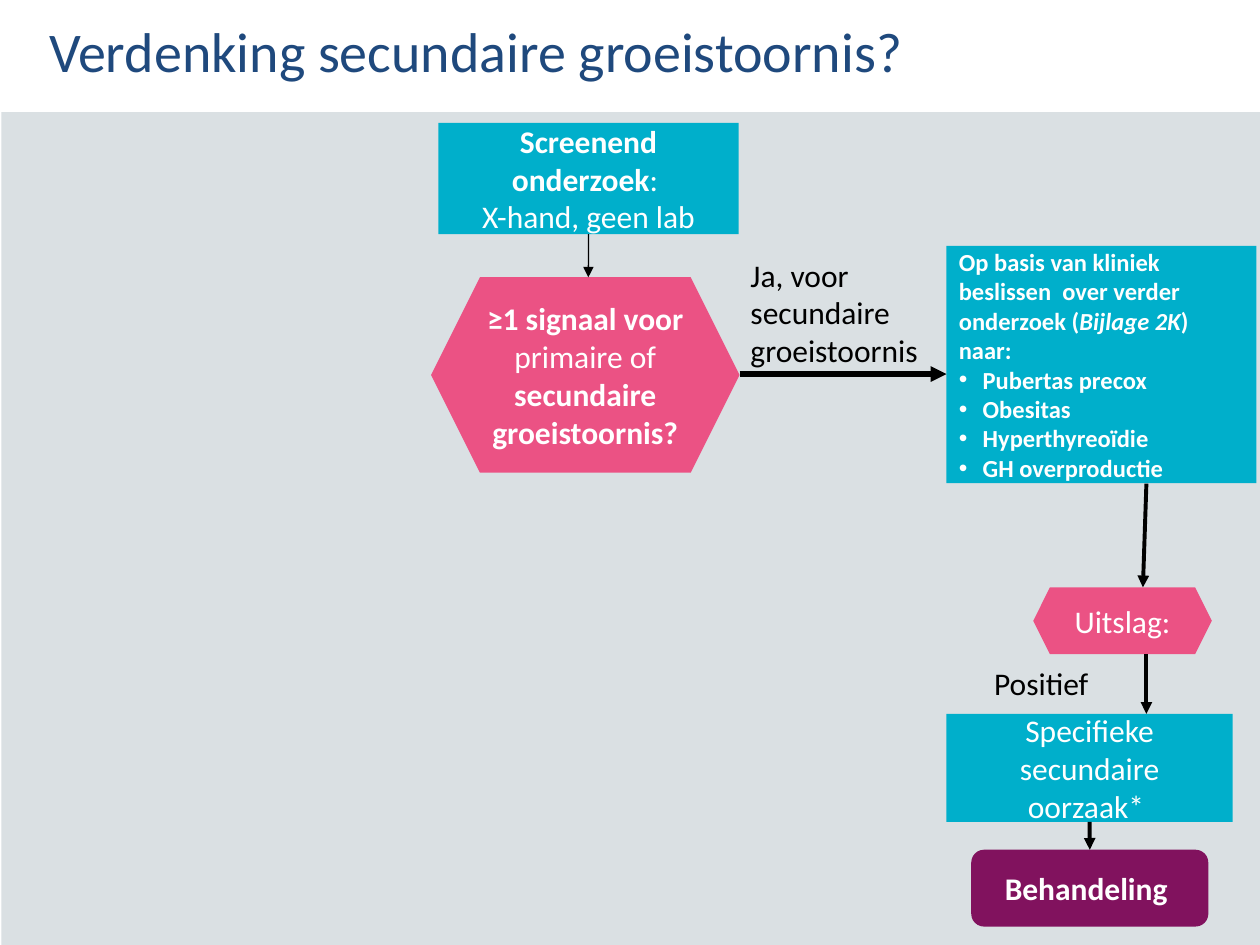
from lxml import etree
from pptx import Presentation
from pptx.dml.color import RGBColor
from pptx.enum import shapes, text
from pptx.oxml import ns
from pptx.util import Cm, Pt

WHITE = RGBColor(0xFF, 0xFF, 0xFF)
BLACK = RGBColor(0, 0, 0)
GREY = RGBColor(0xDA, 0xE0, 0xE3)
PINK = RGBColor(0xEB, 0x52, 0x84)
CYAN = RGBColor(0x00, 0xAF, 0xCB)
PURPLE = RGBColor(0x81, 0x12, 0x5E)
NAVY = RGBColor(0x1F, 0x49, 0x7D)

RECT = shapes.MSO_SHAPE.RECTANGLE
HEXAGON = shapes.MSO_SHAPE.HEXAGON
ROUNDED = shapes.MSO_SHAPE.ROUNDED_RECTANGLE
CENTER = text.PP_ALIGN.CENTER
LEFT = text.PP_ALIGN.LEFT

prs = Presentation()
prs.slide_width, prs.slide_height = Cm(25.4), Cm(19.05)
s = prs.slides.add_slide(prs.slide_layouts[6])


def add_box(kind, box, fill):
    sp = s.shapes.add_shape(kind, *[Cm(v) for v in box])
    sp.shadow.inherit = False
    sp.fill.solid()
    sp.fill.fore_color.rgb = fill
    sp.line.fill.background()
    return sp


def write(sp, paragraphs, size, color, align=LEFT):
    """Fill sp with paragraphs of (text, style) runs; style holds b and/or i."""
    tf = sp.text_frame
    tf.word_wrap = True
    for n, runs in enumerate(paragraphs):
        p = tf.paragraphs[0] if n == 0 else tf.add_paragraph()
        p.alignment = align
        p.font.name, p.font.size, p.font.color.rgb = "Calibri", Pt(size), color
        p.font.bold = all("b" in style for _, style in runs)
        for words, style in runs:
            r = p.add_run()
            r.text = words
            if ("b" in style) != p.font.bold:
                r.font.bold = "b" in style
            if "i" in style:
                r.font.italic = True


add_box(RECT, (0.03, 2.26, 25.4, 16.8), GREY)

# Flow chart boxes
boxes = {}
for name, kind, box, fill, size, align, paragraphs in [
    ("signal", HEXAGON, (8.69, 5.59, 6.22, 3.94), PINK, 18, CENTER,
     [[("≥1 signaal voor ", "b"), ("primaire of ", ""),
       ("secundaire groeistoornis?", "b")]]),
    ("follow_up", RECT, (19.08, 4.96, 6.25, 4.78), CYAN, 14, LEFT,
     [[("Op basis van kliniek beslissen  over verder onderzoek (", "b"),
       ("Bijlage 2K", "bi"), (") naar:", "b")],
      [("Pubertas precox", "b")], [("Obesitas", "b")],
      [("Hyperthyreoïdie", "b")], [("GH overproductie", "b")]]),
    ("cause", RECT, (19.08, 14.39, 5.77, 2.18), CYAN, 18, CENTER,
     [[("Specifieke secundaire oorzaak* ", "")]]),
    ("screening", RECT, (8.84, 2.48, 6.05, 2.24), CYAN, 18, CENTER,
     [[("Screenend onderzoek", "b"), (": ", "")],
      [("X-hand, geen lab", "")]]),
    ("result", HEXAGON, (20.83, 11.84, 3.6, 1.35), PINK, 18, CENTER,
     [[("Uitslag:", "")]]),
    ("treatment", ROUNDED, (19.58, 17.13, 4.78, 1.55), PURPLE, 18, CENTER,
     [[("Behandeling ", "b")]]),
]:
    sp = boxes[name] = add_box(kind, box, fill)
    sp.text_frame.vertical_anchor = text.MSO_ANCHOR.MIDDLE
    write(sp, paragraphs, size, WHITE, align)

for p in boxes["follow_up"].text_frame.paragraphs[1:]:
    pPr = p._p.get_or_add_pPr()
    pPr.set("marL", str(Cm(0.48)))
    pPr.set("indent", str(-Cm(0.48)))
    bullet_font = etree.Element(ns.qn("a:buFont"), typeface="Arial")
    bullet = etree.Element(ns.qn("a:buChar"), char="•")
    pPr.insert(0, bullet_font)
    pPr.insert(1, bullet)

# Title and labels beside the arrows
for box, size, color, lines in [
    ((0.74, 0.2, 17.88, 1.63), 32, NAVY, ["Verdenking secundaire groeistoornis?"]),
    ((14.88, 5.03, 4.47, 2.57), 18, BLACK, ["Ja, voor secundaire", "groeistoornis"]),
    ((19.79, 13.26, 2.79, 1.02), 18, BLACK, ["Positief"]),
]:
    tb = s.shapes.add_textbox(*[Cm(v) for v in box])
    write(tb, [[(line, "")] for line in lines], size, color)
    if size == 32:
        tb.text_frame.word_wrap = False

# Arrows: start, end, width, joined (box, side) at start and end
for ends, width, begin, end in [
    ((11.86, 4.72, 11.86, 5.59), 0.75, ("screening", 2), None),
    ((14.91, 7.54, 19.08, 7.54), 3, None, None),
    ((23.11, 9.75, 23.04, 11.84), 2.25, None, None),
    ((23.11, 13.18, 23.11, 14.39), 2.25, None, None),
    ((21.97, 16.57, 21.97, 17.13), 2.25, ("cause", 2), ("treatment", 0)),
]:
    cx = s.shapes.add_connector(shapes.MSO_CONNECTOR.STRAIGHT, *[Cm(v) for v in ends])
    if begin:
        cx.begin_connect(boxes[begin[0]], begin[1])
    if end:
        cx.end_connect(boxes[end[0]], end[1])
    cx.line.color.rgb = BLACK
    cx.line.width = Pt(width)
    etree.SubElement(cx.line._get_or_add_ln(), ns.qn("a:tailEnd"), type="triangle")
    etree.SubElement(cx._element.spPr, ns.qn("a:effectLst"))

prs.save("out.pptx")
